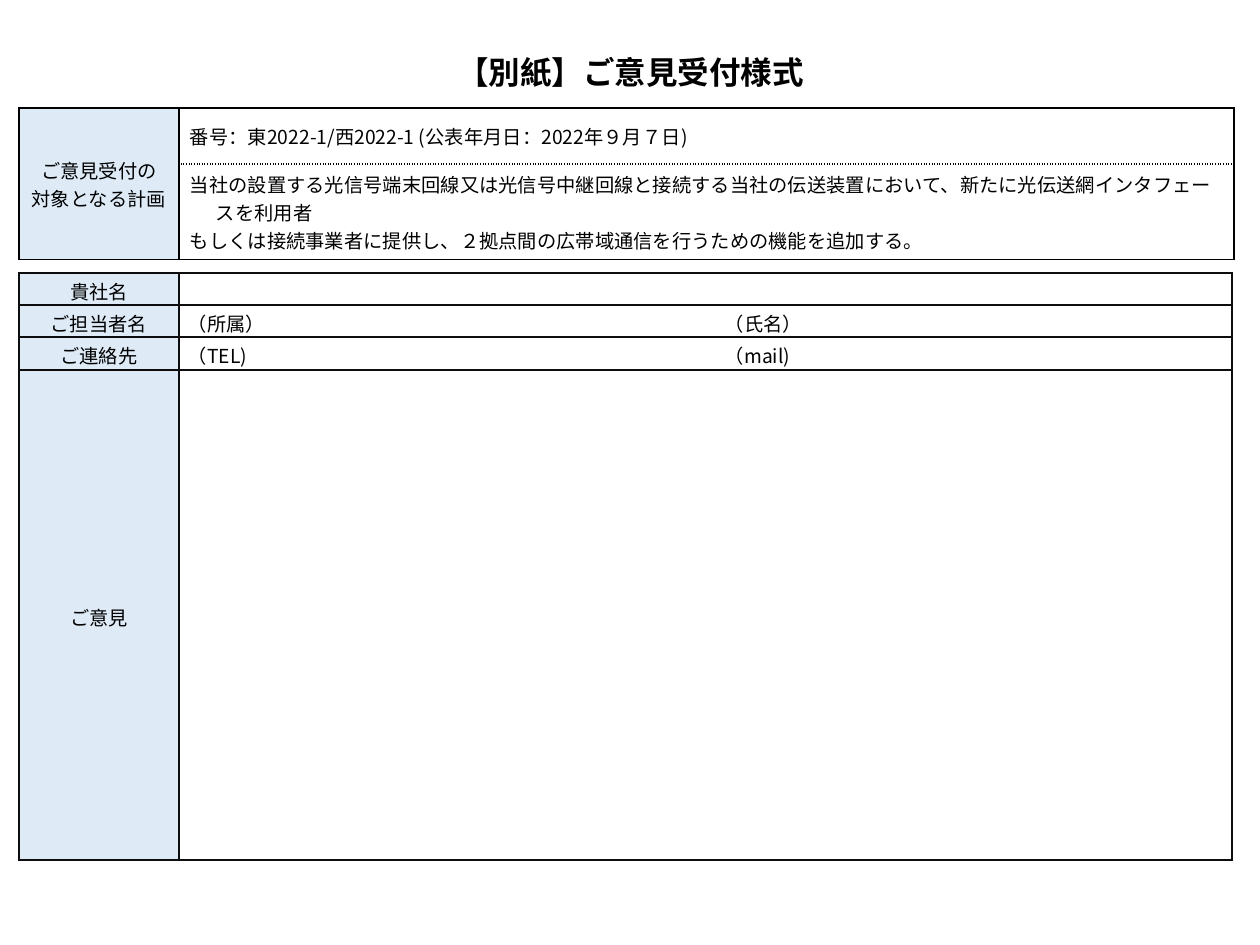
"""Build the opinion submission form slide."""
import lxml.etree
import pptx
import pptx.dml.color
import pptx.enum.text
import pptx.oxml.ns
import pptx.util

PX = 914400 // 126
THEME = {
    "font": "Noto Sans CJK JP",
    "text": pptx.dml.color.RGBColor.from_string("000000"),
    "label": pptx.dml.color.RGBColor.from_string("DEEBF7"),
    "title_size": 18,
    "body_size": 11,
    "form_line": "0D0D0D",
    "plan_line": "000000",
}
qn = pptx.oxml.ns.qn
CENTER = pptx.enum.text.PP_ALIGN.CENTER
LEFT = pptx.enum.text.PP_ALIGN.LEFT
MIDDLE = pptx.enum.text.MSO_ANCHOR.MIDDLE


def write(tf, text, size, align, bold=False):
    tf.text = text
    for p in tf.paragraphs:
        p.alignment = align
        p.font.size = pptx.util.Pt(size)
        p.font.bold = bold
        p.font.name = THEME["font"]
        p.font.color.rgb = THEME["text"]
        lxml.etree.SubElement(p._p.pPr.find(qn("a:defRPr")), qn("a:ea"), typeface=THEME["font"])
        if not p.text:
            lxml.etree.SubElement(p._p, qn("a:endParaRPr"), sz=str(size * 100))


def format_cell(cell, text, label, margins, color, edges="LRTB", dotted=""):
    write(cell.text_frame, text, THEME["body_size"], CENTER if label else LEFT)
    cell.vertical_anchor = MIDDLE
    cell.margin_left = cell.margin_right = margins[0] * PX
    cell.margin_top, cell.margin_bottom = margins[1] * PX, margins[2] * PX
    if label:
        cell.fill.solid()
        cell.fill.fore_color.rgb = THEME["label"]
    else:
        cell.fill.background()
    tcPr = cell._tc.get_or_add_tcPr()
    for i, edge in enumerate("LRTB"):
        ln = lxml.etree.Element(qn("a:ln" + edge), w="12700")
        if edge in edges:
            fill = lxml.etree.SubElement(ln, qn("a:solidFill"))
            lxml.etree.SubElement(fill, qn("a:srgbClr"), val=color)
            dash = "sysDot" if edge in dotted else "solid"
            lxml.etree.SubElement(ln, qn("a:prstDash"), val=dash)
        else:
            lxml.etree.SubElement(ln, qn("a:noFill"))
        tcPr.insert(i, ln)


prs = pptx.Presentation()
prs.slide_width, prs.slide_height = pptx.util.Inches(10), pptx.util.Inches(7.5)
s = prs.slides.add_slide(prs.slide_layouts[6])

tables = []
for top, widths, heights in [
    (273, [160, 537, 516], [32, 32, 33, 490]),
    (108, [160, 1055], [56, 95]),
]:
    frame = s.shapes.add_table(len(heights), len(widths), 19 * PX, top * PX,
                               sum(widths) * PX, sum(heights) * PX)
    table = frame.table
    table.first_row = table.horz_banding = False
    for column, width in zip(table.columns, widths):
        column.width = width * PX
    for row, height in zip(table.rows, heights):
        row.height = height * PX
    tables.append(table)
form, plan = tables

form_rows = [
    ("貴社名", "", ""),
    ("ご担当者名", "（所属）", "（氏名）"),
    ("ご連絡先", "（TEL)", "（mail)"),
    ("ご意見", "", ""),
]
form.cell(0, 1).merge(form.cell(0, 2))
for r, texts in enumerate(form_rows):
    for c, text in enumerate(texts):
        edges = "LRTB" if r == 0 else ("LRTB", "LTB", "RTB")[c]
        format_cell(form.cell(r, c), text, c == 0, (9, 4, 0), THEME["form_line"], edges)

plan_rows = [
    ("ご意見受付の\n対象となる計画", "番号：東2022-1/西2022-1 (公表年月日：2022年９月７日)"),
    ("", "当社の設置する光信号端末回線又は光信号中継回線と接続する当社の伝送装置において、"
         "新たに光伝送網インタフェースを利用者\n"
         "もしくは接続事業者に提供し、２拠点間の広帯域通信を行うための機能を追加する。"),
]
plan.cell(0, 0).merge(plan.cell(1, 0))
for r, texts in enumerate(plan_rows):
    for c, text in enumerate(texts):
        dotted = "BT"[r] if c else ""
        format_cell(plan.cell(r, c), text, c == 0, (11, 6, 6), THEME["plan_line"], dotted=dotted)
for p in plan.cell(1, 1).text_frame.paragraphs:
    p._p.pPr.set("marL", str(26 * PX))
    p._p.pPr.set("indent", str(-26 * PX))

sp = s.shapes.add_textbox(107 * PX, 44 * PX, 1047 * PX, 55 * PX)
tf = sp.text_frame
tf.word_wrap = True
tf.vertical_anchor = MIDDLE
write(tf, "【別紙】ご意見受付様式", THEME["title_size"], CENTER, bold=True)

prs.save("out.pptx")
